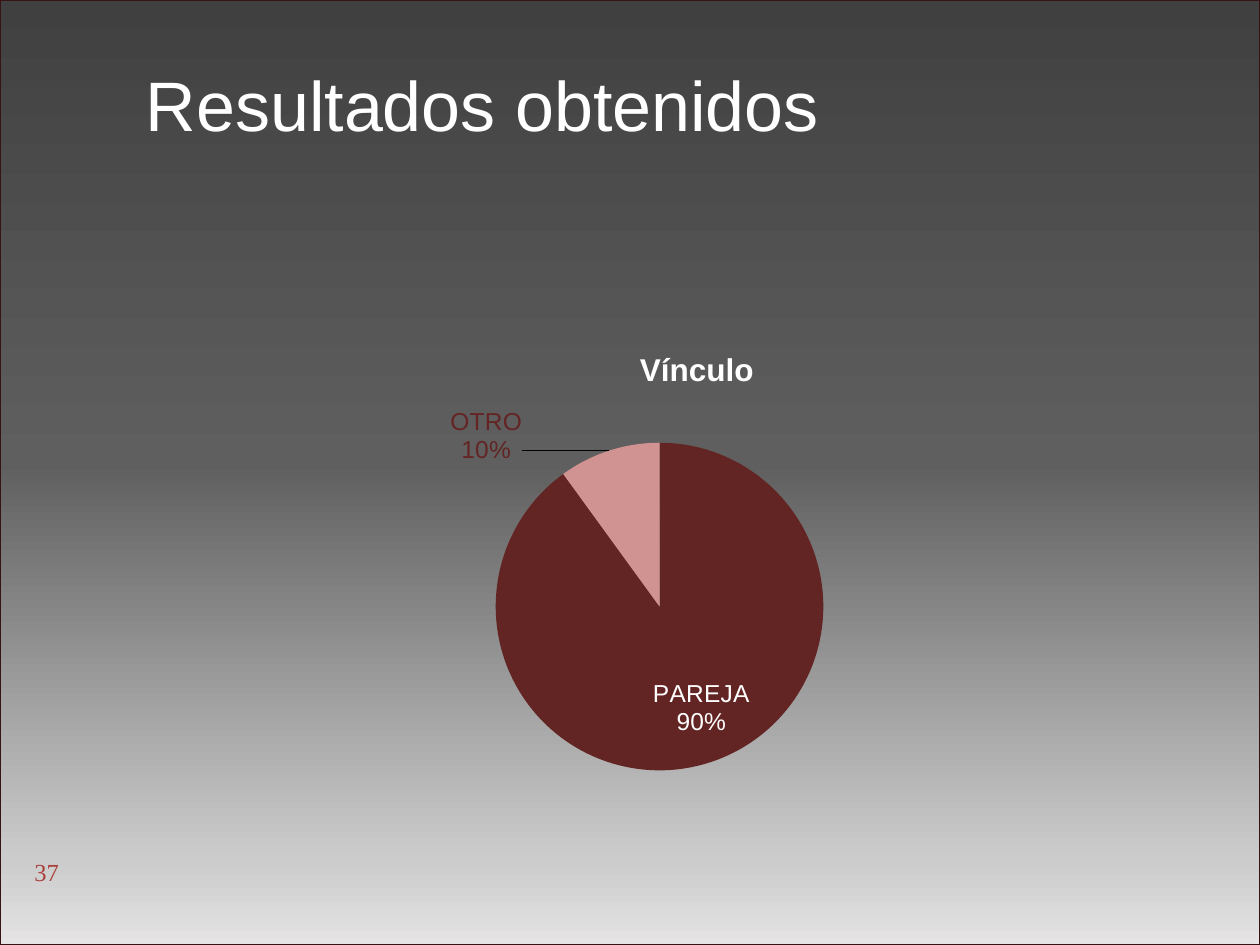
"""Build the results slide with a pie chart of the relationship type."""
from lxml import etree
from pptx import Presentation
from pptx.chart.data import CategoryChartData
from pptx.dml.color import RGBColor
from pptx.enum.chart import XL_CHART_TYPE, XL_LABEL_POSITION
from pptx.enum.shapes import MSO_SHAPE
from pptx.enum.text import MSO_ANCHOR, MSO_AUTO_SIZE, PP_ALIGN
from pptx.oxml import parse_xml
from pptx.oxml.ns import nsdecls, qn
from pptx.util import Inches, Pt

PIE = XL_CHART_TYPE.PIE
INSIDE, OUTSIDE = XL_LABEL_POSITION.INSIDE_END, XL_LABEL_POSITION.OUTSIDE_END
RECT, OVAL = MSO_SHAPE.RECTANGLE, MSO_SHAPE.OVAL
TOP, LEFT = MSO_ANCHOR.TOP, PP_ALIGN.LEFT
FIT = MSO_AUTO_SIZE.SHAPE_TO_FIT_TEXT

THEME = {
    "sans": "Arial", "serif": "Times New Roman",
    "white": "FFFFFF", "border": "371413", "number": "A9423D",
    "dark": "632523", "light": "D19392", "chart": "632423",
    "backdrop": [(0, "404040"), (49, "5F5F5F"), (91, "CCCCCC"), (100, "E5E3E3")],
    "title_pt": 40, "chart_title_pt": 18, "label_pt": 14, "chart_pt": 10,
}


def write(tf, text, font="sans", size="label_pt", color="white", bold=False):
    p = tf.paragraphs[0]
    p.alignment = LEFT
    r = p.add_run()
    r.text = text
    r.font.name = THEME[font]
    r.font.size = Pt(THEME[size])
    r.font.bold = bold
    r.font.color.rgb = RGBColor.from_string(THEME[color])


def place(parent, index, **values):
    for old in parent.findall(qn("c:layout")):
        parent.remove(old)
    items = "".join(f'<c:{k} val="{v}"/>' for k, v in values.items())
    parent.insert(index, parse_xml(
        f'<c:layout {nsdecls("c")}><c:manualLayout>{items}</c:manualLayout></c:layout>'))


prs = Presentation()
prs.slide_width, prs.slide_height = Inches(10), Inches(7.5)
s = prs.slides.add_slide(prs.slide_layouts[6])

backdrop = s.shapes.add_shape(RECT, 0, 0, prs.slide_width, prs.slide_height)
backdrop.shadow.inherit = False
backdrop.fill.gradient()
backdrop.fill.gradient_angle = 270
backdrop.line.color.rgb = RGBColor.from_string(THEME["border"])
backdrop.line.width = Pt(1)
stops = backdrop._element.spPr.find(".//" + qn("a:gsLst"))
for stop in list(stops):
    stops.remove(stop)
for percent, color in THEME["backdrop"]:
    gs = etree.SubElement(stops, qn("a:gs"), pos=str(percent * 1000))
    etree.SubElement(gs, qn("a:srgbClr"), val=color)

badge = s.shapes.add_shape(OVAL, Inches(0.2), Inches(6.73), Inches(0.5), Inches(0.5))
badge.shadow.inherit = False
badge.fill.background()
badge.line.fill.background()
tf = badge.text_frame
tf.margin_left = tf.margin_right = tf.margin_top = tf.margin_bottom = 0
tf.vertical_anchor = TOP
write(tf, "37", font="serif", color="number")

data = CategoryChartData()
data.categories = ["PAREJA", "OTRO"]
data.add_series("Series 1", (90, 10))
chart = s.shapes.add_chart(
    PIE, Inches(2.09), Inches(2.49), Inches(6.69), Inches(3.94), data).chart
chart.has_legend = False
chart.font.name = THEME["serif"]
chart.font.size = Pt(THEME["chart_pt"])
chart.font.color.rgb = RGBColor.from_string(THEME["chart"])
chart.has_title = True
write(chart.chart_title.text_frame, "Vínculo", size="chart_title_pt", bold=True)
place(chart.chart_title._element, 1, xMode="edge", yMode="edge", x=0.44, y=0.06)
place(chart._chartSpace.find(".//" + qn("c:plotArea")), 0, layoutTarget="inner",
      xMode="edge", yMode="edge", x=0.06, y=0.26, w=0.82, h=0.66)

plot = chart.plots[0]
plot.vary_by_categories = True
series = plot.series[0]
labels = series.data_labels
labels.show_value = False
labels.show_category_name = labels.show_percentage = True
labels.number_format = "0%"
labels.number_format_is_linked = False

slices = [("dark", "white", INSIDE), ("light", "chart", OUTSIDE)]
for i, (fill, color, position) in enumerate(slices):
    point = series.points[i]
    point.format.fill.solid()
    point.format.fill.fore_color.rgb = RGBColor.from_string(THEME[fill])
    point.format.line.fill.background()
    label = point.data_label
    label.font.name = THEME["sans"]
    label.font.size = Pt(THEME["label_pt"])
    label.font.color.rgb = RGBColor.from_string(THEME[color])
    label.position = position

offsets = [(0.05, -0.04), (-0.1, 0.04)]
for element, (x, y) in zip(series._element.findall(".//" + qn("c:dLbl")), offsets):
    for flag, shown in (("showVal", "0"), ("showCatName", "1"), ("showPercent", "1")):
        element.find(qn("c:" + flag)).set("val", shown)
    etree.SubElement(element, qn("c:separator")).text = "\n"
    place(element, 1, x=x, y=y)

title = s.shapes.add_textbox(Inches(1.06), Inches(0.44), Inches(5.6), Inches(0.77))
title.text_frame.word_wrap = False
title.text_frame.auto_size = FIT
write(title.text_frame, "Resultados obtenidos", size="title_pt")

prs.save("out.pptx")
